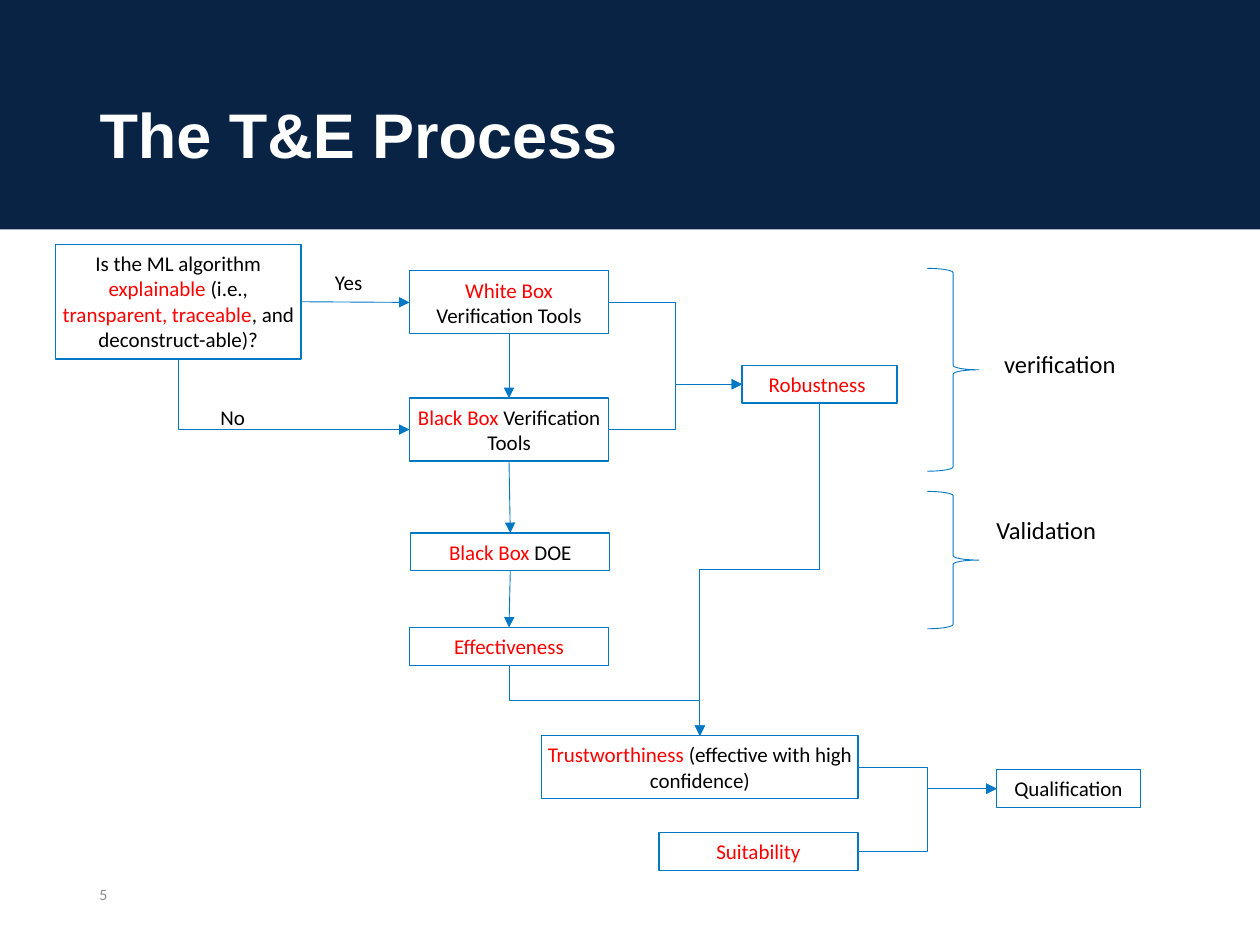
from pptx import Presentation, util as u
from pptx.dml.color import RGBColor
from pptx.enum import shapes, text
from pptx.oxml.ns import qn
from lxml import etree

HUES = {"navy": "092345", "white": "FFFFFF", "blue": "0078C4",
        "red": "FF0000", "black": "000000", "gray": "8C8C8C"}
COLS, ROWS = 100, 75

deck = Presentation()
deck.slide_width, deck.slide_height = u.Inches(10), u.Inches(7.5)
COL, ROW = deck.slide_width / COLS, deck.slide_height / ROWS
TOP, LEFT, BASE, RIGHT = range(4)


def hue(name):
    return RGBColor.from_string(HUES[name])


def place(box, x, y, w, h):
    return [round(n) for n in ((box[0] + x) * COL, (box[1] + y) * ROW, w * COL, h * ROW)]


def write(frame, runs, size=12, font="Calibri", bold=False, align="LEFT",
          anchor="TOP", inset=0.1, space=None):
    frame.word_wrap = True
    frame.auto_size = text.MSO_AUTO_SIZE.NONE
    frame.vertical_anchor = text.MSO_ANCHOR[anchor]
    frame.margin_left = frame.margin_right = u.Inches(inset)
    frame.margin_top = frame.margin_bottom = u.Inches(0.05)
    para = frame.paragraphs[0]
    para.alignment = text.PP_ALIGN[align]
    para.line_spacing = space
    for words, tint in runs:
        run = para.add_run()
        run.text = words
        run.font.size, run.font.name, run.font.bold = u.Pt(size), font, bold
        run.font.color.rgb = hue(tint)


def label(slide, box, spot, words, tint="black", **style):
    item = slide.shapes.add_textbox(*place(box, *spot))
    write(item.text_frame, [(words, tint)], **style)


def shape(slide, box, spot, kind="RECTANGLE", fill=None, line=None, width=0.75):
    item = slide.shapes.add_shape(shapes.MSO_SHAPE[kind], *place(box, *spot))
    item.shadow.inherit = False
    if fill:
        item.fill.solid()
        item.fill.fore_color.rgb = hue(fill)
    else:
        item.fill.background()
    if line:
        item.line.color.rgb = hue(line)
        item.line.width = u.Pt(width)
    else:
        item.line.fill.background()
    return item


def drop(link, bend):
    x, y, w, h = link.left, link.top, link.width, link.height
    back = link.begin_x > link.end_x
    link.left, link.top = x + (w - h) // 2, y + (h - w) // 2
    link.width, link.height = h, w
    props = link.element.spPr
    frame = props.find(qn("a:xfrm"))
    frame.set("rot", "5400000")
    frame.set("flipH", "0")
    frame.set("flipV", "0" if back else "1")
    props.find(qn("a:prstGeom")).set("prst", bend)


def join(slide, start, side, end, goal, bend=None):
    kind = shapes.MSO_CONNECTOR.ELBOW if bend else shapes.MSO_CONNECTOR.STRAIGHT
    link = slide.shapes.add_connector(kind, 0, 0, 0, 0)
    link.begin_connect(start, side)
    link.end_connect(end, goal)
    if bend and side == BASE:
        drop(link, bend)
    link.line.color.rgb = hue("blue")
    link.line.width = u.Pt(0.5)
    etree.SubElement(link.line._get_or_add_ln(), qn("a:tailEnd"), type="triangle")
    etree.SubElement(link.element.spPr, qn("a:effectLst"))


def header(slide, box):
    band = shape(slide, box, (0, 0, *box[2:]), fill="navy")
    title = slide.shapes.title
    title.element.addprevious(band.element)
    title.left, title.top, title.width, title.height = place(box, 6.9, 5.8, 86.2, 10.4)
    write(title.text_frame, [("The T&E Process", "white")], size=36, font="Arial",
          bold=True, anchor="MIDDLE", space=0.9)


def flow(slide, box):
    one, two, wide = 3, 5, 15.8
    mid = 28.1
    plan = {
        "trust": ((38.6, 39, 25.1, two), [("Trustworthiness", "red"),
                  (" (effective with high confidence)", "black")]),
        "robust": ((54.5, 9.6, 12.3, one), [("Robustness ", "red")]),
        "effect": ((mid, 30.4, wide, one), [("Effectiveness", "red")]),
        "suit": ((47.9, 46.7, wide, one), [("Suitability", "red")]),
        "qual": ((74.7, 41.7, 11.4, one), [("Qualification", "black")]),
        "ask": ((0, 0, 19.5, 9.1), [("Is the ML algorithm ", "black"), ("explainable", "red"),
                (" (i.e., ", "black"), ("transparent, traceable", "red"),
                (", and deconstruct-able)?", "black")]),
        "doe": ((mid + 0.1, 22.9, wide, one), [("Black Box ", "red"), ("DOE", "black")]),
        "black": ((mid, 12.2, wide, two), [("Black Box ", "red"), ("Verification Tools", "black")]),
        "white": ((mid, 2.1, wide, two), [("White Box ", "red"), ("Verification Tools", "black")]),
    }
    node = {}
    for name, (spot, runs) in plan.items():
        node[name] = shape(slide, box, spot, line="blue")
        write(node[name].text_frame, runs, align="CENTER", inset=0.04)

    elbow, step = "bentConnector2", "bentConnector3"
    for start, side, end, goal, bend in (
            ("ask", RIGHT, "white", LEFT, None),
            ("white", BASE, "black", TOP, None),
            ("black", BASE, "doe", TOP, None),
            ("ask", BASE, "black", LEFT, elbow),
            ("doe", BASE, "effect", TOP, None),
            ("robust", BASE, "trust", TOP, step),
            ("effect", BASE, "trust", TOP, step),
            ("black", RIGHT, "robust", LEFT, step),
            ("white", RIGHT, "robust", LEFT, step),
            ("trust", RIGHT, "qual", LEFT, step),
            ("suit", RIGHT, "qual", LEFT, step)):
        join(slide, node[start], side, node[end], goal, bend)

    label(slide, box, (12.1, 12.2, 5.2, 3), "No")
    label(slide, box, (21.2, 1.5, 5.2, 3), "Yes")


def phase(slide, box, words, x, y):
    shape(slide, box, (0, 0, *box[2:]), kind="RIGHT_BRACE", line="blue", width=0.5)
    label(slide, box, (x, y, 16.1, 3.4), words, size=14)


def footer(slide, box):
    label(slide, box, (0, 0, *box[2:]), "5", tint="gray", size=9, anchor="MIDDLE")


def main():
    slide = deck.slides.add_slide(deck.slide_layouts[5])
    header(slide, (0, 0, COLS, 18.2))
    flow(slide, (4.4, 19.4))
    phase(slide, (73.6, 21.3, 4.1, 16.1), "verification", 5.1, 5.9)
    phase(slide, (73.6, 39, 4.1, 10.9), "Validation", 4.5, 1.4)
    footer(slide, (6.9, 69, 22.5, 4))
    deck.save("out.pptx")


if __name__ == "__main__":
    main()
